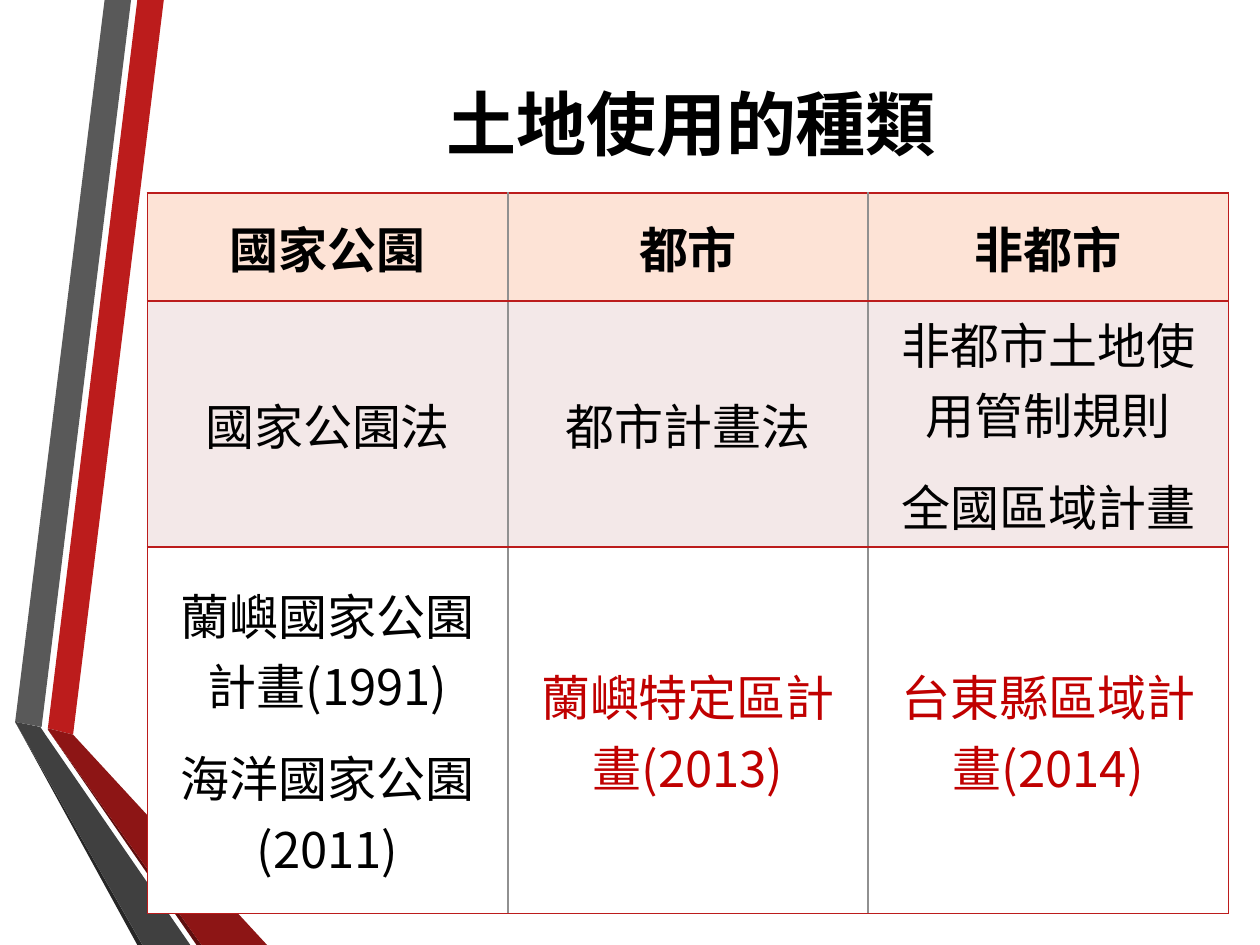
import dataclasses

import lxml.etree
import pptx
import pptx.dml.color
import pptx.enum.text
import pptx.oxml.ns
import pptx.util

Inches = pptx.util.Inches
qn = pptx.oxml.ns.qn


@dataclasses.dataclass(frozen=True)
class Theme:
    font: str = "Noto Sans CJK SC"
    title_size: int = 40
    cell_size: int = 28
    paragraph_gap: int = 12
    black: str = "000000"
    accent: str = "C00000"
    border: str = "BC1C1C"
    divider: str = "909090"
    row_fills: tuple = ("FDE3D6", "F3E8E8", "FFFFFF")


THEME = Theme()

# Ribbon pieces from back to front: fill colour and outline points in inches
RIBBONS = [
    ("BC1C1C", [(0.38, 5.78), (0.58, 5.83), (1.3, 0), (1.09, 0)]),
    ("595959", [(1.04, 0), (0.83, 0), (0.12, 5.73), (0.33, 5.77)]),
    ("262626", [(0.12, 5.73), (1.09, 7.5), (1.13, 7.5)]),
    ("5E0E0E", [(0.38, 5.79), (1.56, 7.5), (1.6, 7.5)]),
    ("8D1515", [(0.38, 5.79), (1.6, 7.5), (2.12, 7.5), (0.58, 5.83), (0.38, 5.78)]),
    ("404040", [(1.51, 7.5), (0.36, 5.83), (0.32, 5.77), (0.12, 5.73), (1.13, 7.5)]),
]

# Each cell is a list of paragraphs
LAND_USE_ROWS = [
    [["國家公園"], ["都市"], ["非都市"]],
    [["國家公園法"], ["都市計畫法"], ["非都市土地使用管制規則", "全國區域計畫"]],
    [["蘭嶼國家公園計畫(1991)", "海洋國家公園(2011)"],
     ["蘭嶼特定區計畫(2013)"], ["台東縣區域計畫(2014)"]],
]
ROW_HEIGHTS = (0.86, 1.95, 2.91)
COLUMN_WIDTH = 2.86


def rgb(color):
    return pptx.dml.color.RGBColor.from_string(color)


def write_text(text_frame, paragraphs, *, size, color=THEME.black, bold=False, gap=0):
    """Fill a text frame with centred paragraphs, with a gap between them."""
    text_frame.word_wrap = True
    for index, text in enumerate(paragraphs):
        paragraph = text_frame.paragraphs[0] if index == 0 else text_frame.add_paragraph()
        paragraph.alignment = pptx.enum.text.PP_ALIGN.CENTER
        paragraph.space_before = pptx.util.Pt(0)
        paragraph.space_after = pptx.util.Pt(gap if len(paragraphs) > 1 else 0)
        run = paragraph.add_run()
        run.text = text
        run.font.name = THEME.font
        run.font.size = pptx.util.Pt(size)
        run.font.bold = bold
        run.font.color.rgb = rgb(color)
        # East Asian characters take their own typeface element
        east_asian = lxml.etree.SubElement(run.font._element, qn("a:ea"))
        east_asian.set("typeface", THEME.font)


def add_ribbon(slide, color, points):
    corners = [(Inches(x), Inches(y)) for x, y in points]
    builder = slide.shapes.build_freeform(*corners[0])
    builder.add_line_segments(corners[1:], close=True)
    shape = builder.convert_to_shape()
    shape.shadow.inherit = False
    shape.fill.solid()
    shape.fill.fore_color.rgb = rgb(color)
    shape.line.fill.background()


def add_title(slide, text):
    title = slide.shapes.title
    title.left, title.top = Inches(1.22), Inches(0.01)
    title.width, title.height = Inches(8.53), Inches(1.92)
    title.text_frame.vertical_anchor = pptx.enum.text.MSO_ANCHOR.MIDDLE
    write_text(title.text_frame, [text], size=THEME.title_size, bold=True)
    # Bring the title in front of the ribbons
    title.element.getparent().append(title.element)


def set_borders(cell, left, right, top, bottom):
    properties = cell._tc.get_or_add_tcPr()
    sides = {"a:lnL": left, "a:lnR": right, "a:lnT": top, "a:lnB": bottom}
    for index, (tag, color) in enumerate(sides.items()):
        line = lxml.etree.Element(qn(tag), w=str(pptx.util.Pt(1)))
        fill = lxml.etree.SubElement(line, qn("a:solidFill"))
        lxml.etree.SubElement(fill, qn("a:srgbClr"), val=color)
        properties.insert(index, line)


def add_land_use_table(slide, rows):
    column_count = len(rows[0])
    table = slide.shapes.add_table(
        len(rows), column_count, Inches(1.17), Inches(1.53),
        Inches(COLUMN_WIDTH * column_count), Inches(sum(ROW_HEIGHTS))).table
    table.first_row = table.horz_banding = False
    for column in table.columns:
        column.width = Inches(COLUMN_WIDTH)

    last_row, last_column = len(rows) - 1, column_count - 1
    for row_index, row in enumerate(rows):
        table.rows[row_index].height = Inches(ROW_HEIGHTS[row_index])
        for column_index, paragraphs in enumerate(row):
            cell = table.cell(row_index, column_index)
            cell.vertical_anchor = pptx.enum.text.MSO_ANCHOR.MIDDLE
            cell.fill.solid()
            cell.fill.fore_color.rgb = rgb(THEME.row_fills[row_index])
            set_borders(
                cell,
                left=THEME.border if column_index == 0 else THEME.divider,
                right=THEME.border if column_index == last_column else THEME.divider,
                top=THEME.border, bottom=THEME.border)
            # The local plans outside the national park are highlighted
            highlighted = row_index == last_row and column_index > 0
            write_text(cell.text_frame, paragraphs, size=THEME.cell_size,
                       color=THEME.accent if highlighted else THEME.black,
                       bold=row_index == 0, gap=THEME.paragraph_gap)
    # The closing paragraph of the park plans has no space after it
    table.cell(last_row, 0).text_frame.paragraphs[-1].space_after = pptx.util.Pt(0)


def main():
    presentation = pptx.Presentation()
    presentation.slide_width, presentation.slide_height = Inches(10), Inches(7.5)
    slide = presentation.slides.add_slide(presentation.slide_layouts[5])

    # Ribbon decoration
    for color, points in RIBBONS:
        add_ribbon(slide, color, points)

    # Title and table
    add_title(slide, "土地使用的種類")
    add_land_use_table(slide, LAND_USE_ROWS)

    presentation.save("out.pptx")


if __name__ == "__main__":
    main()
